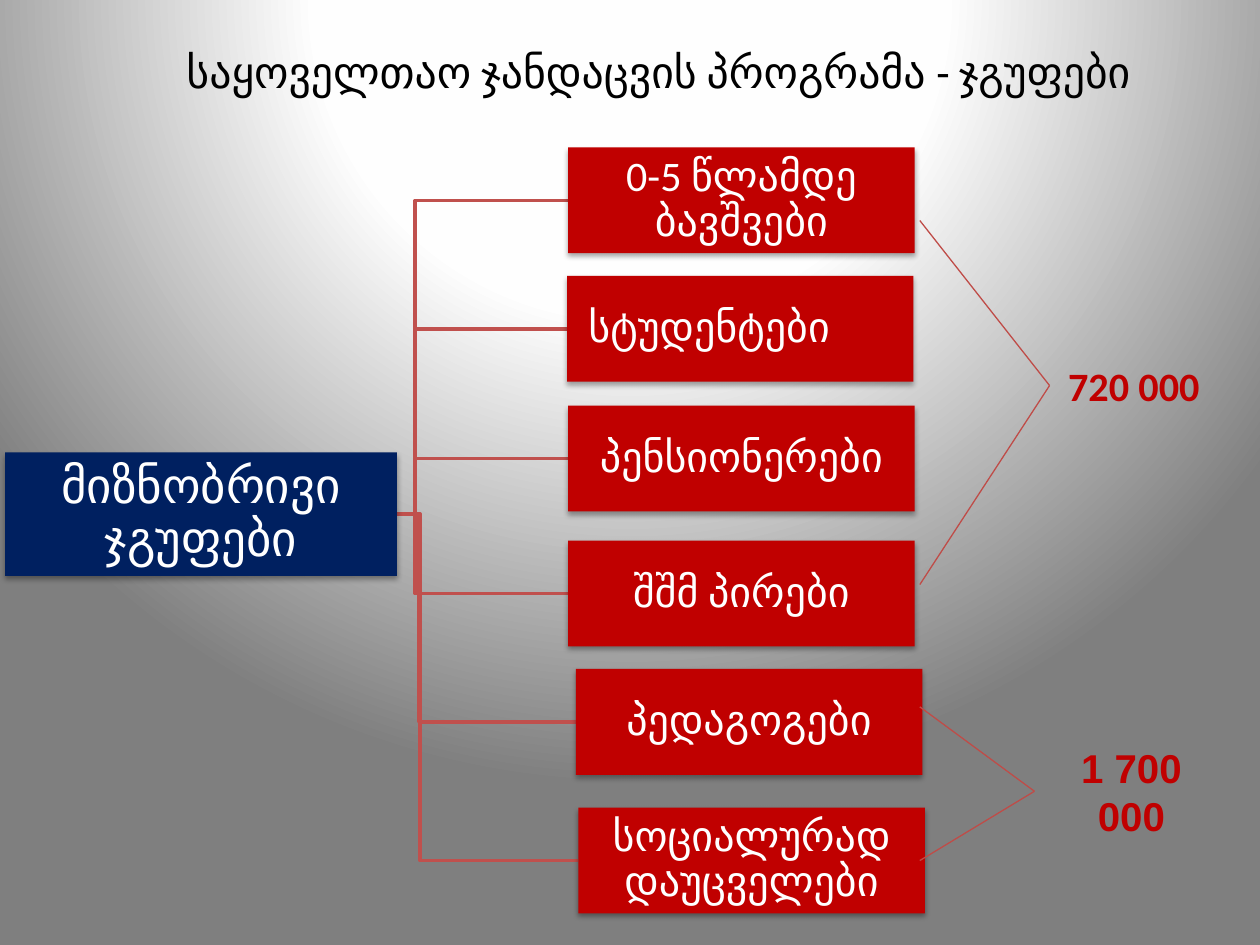
"""Build a slide of the target groups of a health programme and their totals."""
import pptx
import pptx.dml.color
import pptx.enum.shapes
import pptx.enum.text
import pptx.oxml
import pptx.oxml.ns
import pptx.util
from lxml import etree

Inches = pptx.util.Inches
Align = pptx.enum.text.PP_ALIGN
NS = pptx.oxml.ns.nsdecls("a", "p")
theme = {
    "navy": "002060", "red": "C00000", "white": "FFFFFF", "black": "000000",
    "branch": "C0504D", "brace": "BF4C48",
    "title": 25, "root": 28, "group": 24, "total": 23,
    "face": "Calibri", "alt": "Arial",
}


def tint(name):
    return pptx.dml.color.RGBColor.from_string(theme[name])


def write(shape, text, size, color, face="face", bold=False, inset=None, align=Align.CENTER):
    frame = shape.text_frame
    frame.word_wrap = True
    frame.vertical_anchor = pptx.enum.text.MSO_ANCHOR.MIDDLE
    if inset is not None:
        for side in ("left", "top", "right", "bottom"):
            setattr(frame, "margin_" + side, Inches(inset))
    para = frame.paragraphs[0]
    para.alignment = align
    run = para.add_run()
    run.text = text
    look = {"size": pptx.util.Pt(theme[size]), "name": theme[face], "bold": bold}
    for key, value in look.items():
        setattr(run.font, key, value)
    run.font.color.rgb = tint(color)


deck = pptx.Presentation()
deck.slide_width, deck.slide_height = Inches(10), Inches(7.5)
slide = deck.slides.add_slide(deck.slide_layouts[6])
shapes = slide.shapes

slide.background.fill.solid()
solid = slide.element.find(".//" + pptx.oxml.ns.qn("a:solidFill"))
stops = "".join(
    f'<a:gs pos="{pos * 1000}"><a:srgbClr val="{color}"/></a:gs>'
    for pos, color in ((0, "FFFFFF"), (40, "FEFEFE"), (100, "7F7F7F"))
)
glow = pptx.oxml.parse_xml(
    f'<a:gradFill {NS} rotWithShape="1"><a:gsLst>{stops}</a:gsLst><a:path path="circle">'
    '<a:fillToRect l="50000" t="-80000" r="50000" b="180000"/></a:path></a:gradFill>'
)
solid.getparent().replace(solid, glow)

title = shapes.add_textbox(Inches(0.73), Inches(0.25), Inches(9), Inches(0.62))
write(title, "საყოველთაო ჯანდაცვის პროგრამა - ჯგუფები", "title", "black")

wide, high = 2.75, 0.84
groups = [
    (4.51, 1.17, "0-5 წლამდე ბავშვები"),
    (4.5, 2.19, "სტუდენტები"),
    (4.51, 3.22, "პენსიონერები"),
    (4.51, 4.29, "შშმ პირები"),
    (4.57, 5.31, "პედაგოგები"),
    (4.59, 6.41, "სოციალურად დაუცველები"),
]

hub, axis = 2.08, 4.08
for left, top, label in reversed(groups):
    bend, mid = (hub + left) / 2, top + high / 2
    pen = shapes.build_freeform(Inches(hub), Inches(axis))
    turns = [(bend, axis), (bend, mid), (left, mid)]
    pen.add_line_segments([(Inches(x), Inches(y)) for x, y in turns], close=False)
    branch = pen.convert_to_shape()
    branch.shadow.inherit = False
    branch.fill.background()
    branch.line.color.rgb = tint("branch")
    branch.line.width = pptx.util.Pt(2)

cards = [(0.04, 3.59, 3.11, 0.98, "მიზნობრივი ჯგუფები", "root", "navy")]
cards += [(x, y, wide, high, label, "group", "red") for x, y, label in groups]
for left, top, width, height, label, size, color in cards:
    card = shapes.add_shape(
        pptx.enum.shapes.MSO_SHAPE.RECTANGLE, *map(Inches, (left, top, width, height))
    )
    card.fill.solid()
    card.fill.fore_color.rgb = tint(color)
    card.line.fill.background()
    card.shadow.inherit = False
    effect = card.element.spPr.find(pptx.oxml.ns.qn("a:effectLst"))
    effect.append(pptx.oxml.parse_xml(
        f'<a:outerShdw {NS} blurRad="39370" dist="22860" dir="5400000" rotWithShape="0">'
        '<a:srgbClr val="000000"><a:alpha val="35000"/></a:srgbClr></a:outerShdw>'
    ))
    write(card, label, size, "white", inset=0.02)
    card.text_frame.paragraphs[0].line_spacing = 0.9
    if label == "სტუდენტები":
        card.text_frame.paragraphs[0].alignment = Align.LEFT
        card.text_frame.margin_left = Inches(0.17)

totals = [
    (8.25, 2.75, 1.5, "720 000", "face", (8.33, 3.06), (1.75, 4.64), False),
    (8.21, 5.97, 1.54, "1 700 000", "alt", (8.21, 6.28), (5.61, 6.83), True),
]
for left, top, width, label, face, tip, starts, joined in totals:
    total = shapes.add_textbox(Inches(left), Inches(top), Inches(width), Inches(0.62))
    write(total, label, "total", "red", face, True)
    for start in starts:
        brace = shapes.add_connector(
            pptx.enum.shapes.MSO_CONNECTOR.STRAIGHT,
            *map(Inches, (7.3, start, *tip)),
        )
        if joined:
            brace.end_connect(total, 1)
        brace.line.color.rgb = tint("brace")
        brace.line.width = pptx.util.Pt(0.75)
        etree.SubElement(brace.element.spPr, pptx.oxml.ns.qn("a:effectLst"))

deck.save("out.pptx")
